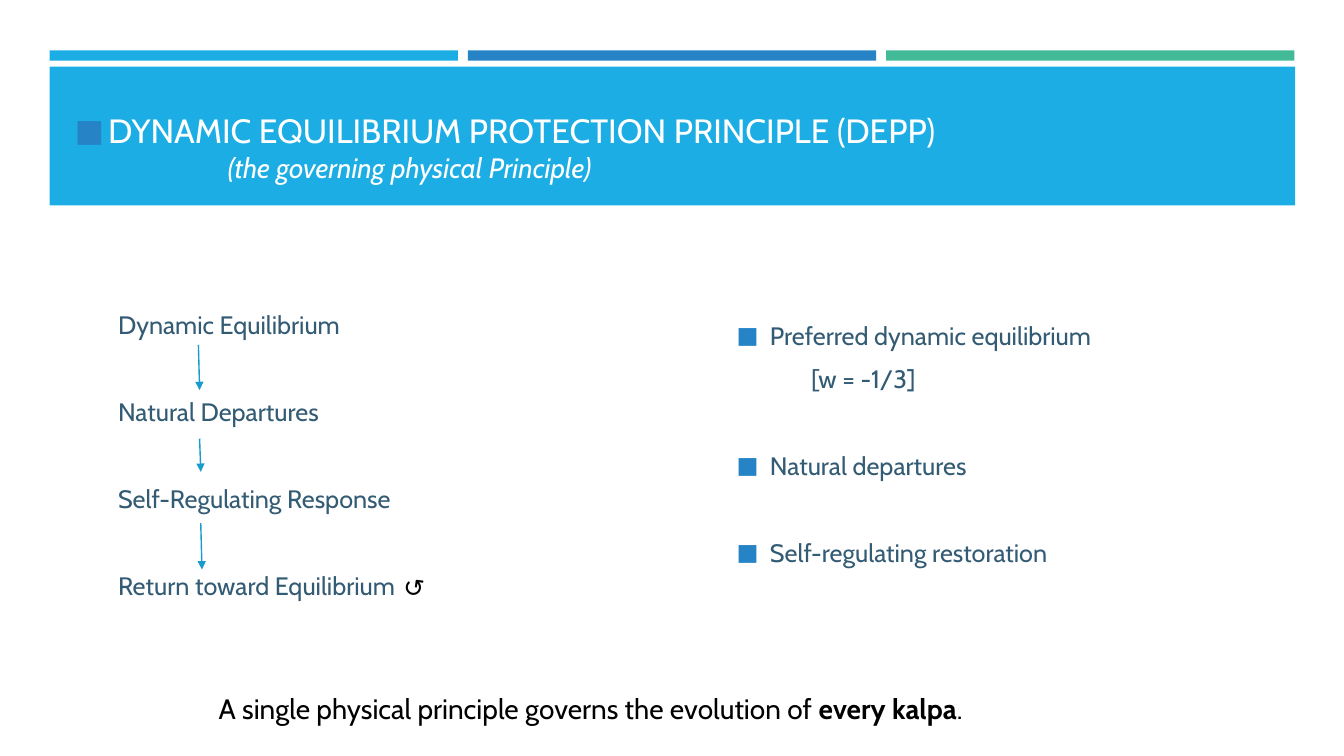
from lxml.etree import SubElement
from pptx import Presentation
from pptx.dml.color import RGBColor
from pptx.enum.shapes import MSO_CONNECTOR, MSO_SHAPE
from pptx.enum.text import MSO_ANCHOR, MSO_AUTO_SIZE, PP_ALIGN
from pptx.oxml.ns import qn
from pptx.util import Cm, Pt

SKY, BLUE, GREEN = "1CADE4", "2683C6", "42BA97"
SLATE, WHITE, BLACK, ARROW = "335B74", "FFFFFF", "000000", "189CCE"
BULLET_INDENT = 0.84


def color(hex_text):
    return RGBColor.from_string(hex_text)


def add_text(para, text, size=18, ink=BLACK, bold=False, italic=False):
    span = para.add_run()
    span.text = text
    span.font.name = "Cabin"
    span.font.size = Pt(size)
    span.font.bold = bold
    span.font.italic = italic
    span.font.color.rgb = color(ink)


def set_bullet(para, shown, indent):
    """Give the paragraph a square bullet, or none, and a left indent in cm."""
    properties = para._p.get_or_add_pPr()
    properties.set("marL", str(Cm(indent)))
    properties.set("indent", str(-Cm(indent) if shown else 0))
    if not shown:
        SubElement(properties, qn("a:buNone"))
        return
    bullet_color = SubElement(properties, qn("a:buClr"))
    SubElement(bullet_color, qn("a:srgbClr"), val=BLUE)
    SubElement(properties, qn("a:buSzPct"), val="92000")
    SubElement(properties, qn("a:buFont"), typeface="Cabin")
    SubElement(properties, qn("a:buChar"), char="■")


class SlideBuilder:
    def __init__(self, page):
        self.page = page

    def bar(self, left, top, width, height, fill):
        """Draw a plain rectangle behind the placeholders."""
        bar = self.page.shapes.add_shape(
            MSO_SHAPE.RECTANGLE, Cm(left), Cm(top), Cm(width), Cm(height))
        bar.shadow.inherit = False
        bar.fill.solid()
        bar.fill.fore_color.rgb = color(fill)
        bar.line.fill.background()
        self.page.shapes.title.element.addprevious(bar.element)

    def fill_placeholder(self, box, place, lines, anchor, ink, bottom=0.13):
        """Place the box; each line is (text, size, bullet, indent, gap, italic)."""
        box.left, box.top, box.width, box.height = map(Cm, place)
        frame = box.text_frame
        frame.word_wrap = True
        frame.auto_size = MSO_AUTO_SIZE.NONE
        frame.vertical_anchor = anchor
        frame.margin_bottom = Cm(bottom)
        for index, (text, size, bullet, indent, gap, italic) in enumerate(lines):
            para = frame.add_paragraph() if index else frame.paragraphs[0]
            set_bullet(para, bullet, indent)
            para.alignment = PP_ALIGN.LEFT
            para.space_before = Pt(gap)
            para.space_after = Pt(0)
            add_text(para, text, size, ink, italic=italic)

    def text_box(self, left, top, width, height, rotation=0):
        box = self.page.shapes.add_textbox(Cm(left), Cm(top), Cm(width), Cm(height))
        box.rotation = rotation
        box.text_frame.word_wrap = True
        return box.text_frame.paragraphs[0]

    def arrow(self, left, top, bottom):
        """Draw an arrow downwards that leans slightly to the right."""
        arrow = self.page.shapes.add_connector(
            MSO_CONNECTOR.STRAIGHT, Cm(left), Cm(top), Cm(left + 0.03), Cm(bottom))
        arrow.line.color.rgb = color(ARROW)
        arrow.line.width = Pt(1)
        SubElement(arrow.line._get_or_add_ln(), qn("a:tailEnd"), type="triangle")
        SubElement(arrow.element.spPr, qn("a:effectLst"))


def main():
    deck = Presentation()
    deck.slide_width, deck.slide_height = Cm(33.87), Cm(19.05)
    page = deck.slides.add_slide(deck.slide_layouts[3])
    builder = SlideBuilder(page)
    title, cycle, summary = page.placeholders

    for index, fill in enumerate((SKY, BLUE, GREEN)):
        builder.bar(1.25 + index * 10.54, 1.27, 10.29, 0.26, fill)
    builder.bar(1.25, 1.68, 31.39, 3.5, SKY)

    builder.fill_placeholder(title, (1.63, 2.03, 30.63, 2.74), [
        ("DYNAMIC EQUILIBRIUM PROTECTION PRINCIPLE (DEPP)",
         24, True, BULLET_INDENT, 0, False),
        ("(the governing physical Principle)", 20, False, 3.86, 0, True),
    ], MSO_ANCHOR.BOTTOM, WHITE)

    steps = ("Dynamic Equilibrium", "Natural Departures",
             "Self-Regulating Response", "Return toward Equilibrium")
    builder.fill_placeholder(cycle, (2.72, 5.61, 14.22, 11.71), [
        (step, 18, False, 0, 40.4 if index else 0, False)
        for index, step in enumerate(steps)
    ], MSO_ANCHOR.MIDDLE, SLATE)

    builder.fill_placeholder(summary, (18.31, 6.63, 15.09, 10.08), [
        ("Preferred dynamic equilibrium", 18, True, BULLET_INDENT, 0, False),
        ("[w = -1/3]", 18, False, 1.88, 9.6, False),
        ("Natural departures", 18, True, BULLET_INDENT, 40.4, False),
        ("Self-regulating restoration", 18, True, BULLET_INDENT, 40.4, False),
    ], MSO_ANCHOR.MIDDLE, SLATE, bottom=1.1)

    for left, top, bottom in ((5, 8.69, 9.83), (5.03, 11.05, 11.89), (5.06, 13.18, 14.35)):
        builder.arrow(left, top, bottom)

    conclusion = builder.text_box(5.26, 17.3, 28.14, 1.11)
    add_text(conclusion, "A single physical principle governs the evolution of ", 20)
    add_text(conclusion, "every kalpa", 20, bold=True)
    add_text(conclusion, ".", 20)
    add_text(builder.text_box(9.91, 14.35, 1.83, 1.02, rotation=8), "↺")

    deck.save("out.pptx")


if __name__ == "__main__":
    main()
